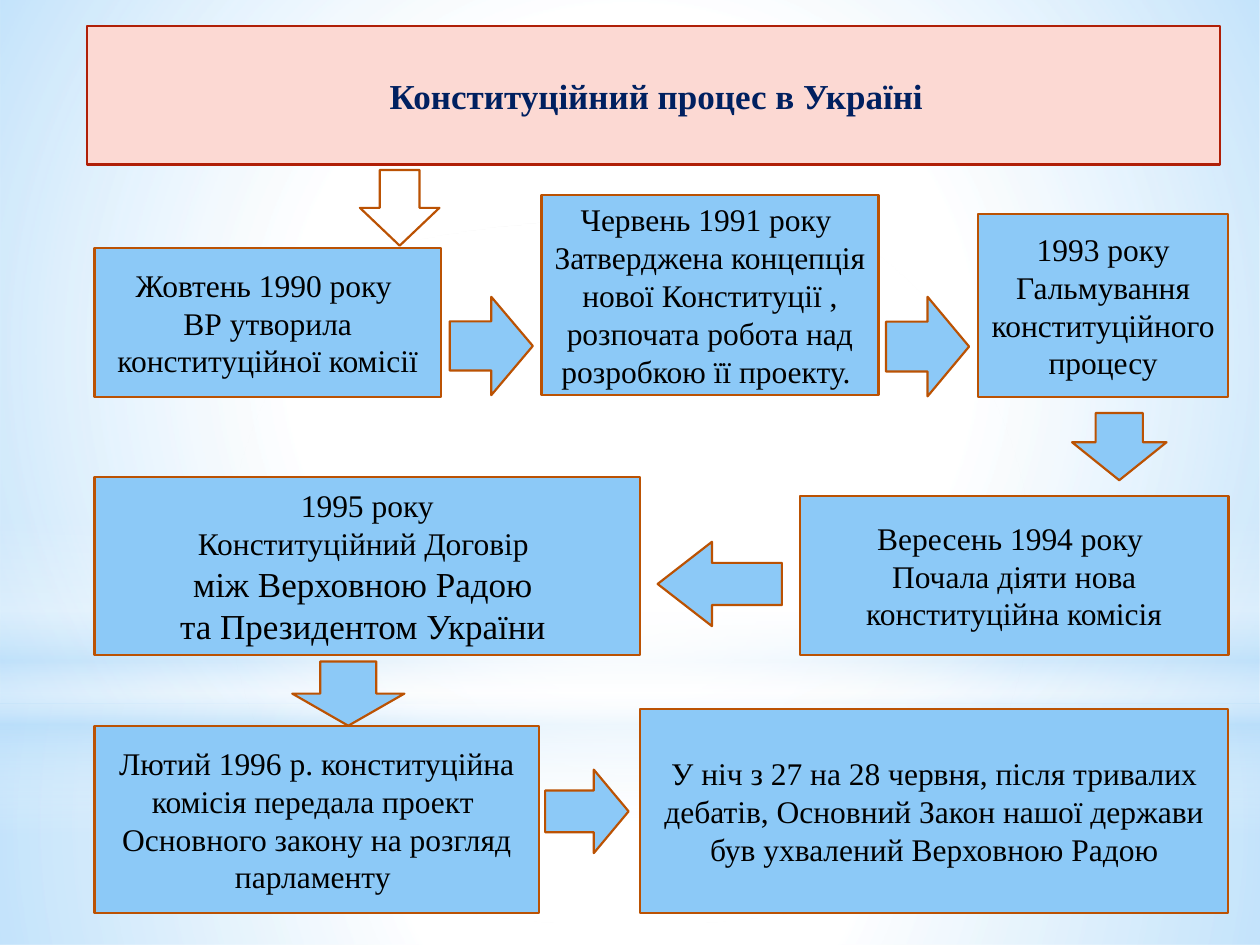
from dataclasses import dataclass

from lxml import etree
from pptx import Presentation
from pptx.dml.color import RGBColor
from pptx.enum import shapes, text
from pptx.oxml import parse_xml
from pptx.oxml.ns import nsdecls, qn
from pptx.util import Pt

Kind = shapes.MSO_SHAPE


@dataclass(frozen=True)
class Theme:
    font: str = "Times New Roman"
    body: float = 18
    large: float = 20
    line_width: float = 1.25
    ink: str = "000000"
    title: str = "002060"
    box: str = "8CC9F7"
    white: str = "FFFFFF"
    border: str = "BB5203"
    ribbon: str = "FCD9D3"
    ribbon_border: str = "B01F07"
    glow: str = "B4DCFA"


@dataclass(frozen=True)
class Area:
    left: float
    top: float
    width: float
    height: float

    def lengths(self) -> list:
        return [Pt(v) for v in (self.left, self.top, self.width, self.height)]


@dataclass(frozen=True)
class Stop:
    position: int
    color: str
    opacity: int = 100


@dataclass(frozen=True)
class Glow:
    kind: Kind
    area: Area
    stops: tuple
    radial: bool = True


@dataclass(frozen=True)
class Step:
    """A box standing on the bottom edge of its row; each line is a paragraph."""
    left: float
    right: float
    bottom: float
    height: float
    lines: tuple
    large_from: int = 99


@dataclass(frozen=True)
class Arrow:
    kind: Kind
    area: Area
    head: float = 0.5
    rotation: float = 0
    fill: str = Theme.box


THEME = Theme()
LEFT, RIGHT = 54, 702
ROWS = (226.8, 374.4, 521.6)
W, B = THEME.white, THEME.glow

GLOWS = (
    Glow(Kind.RECTANGLE, Area(0, 401.8, 720, 138.2),
         (Stop(0, W, 91), Stop(37, W, 76), Stop(100, B, 79))),
    Glow(Kind.RECTANGLE, Area(0, 0, 720, 401.8),
         (Stop(0, W, 89), Stop(48, W, 62), Stop(100, B, 79))),
    Glow(Kind.RECTANGLE, Area(0, 296.6, 720, 180),
         (Stop(0, W, 0), Stop(29, W, 30), Stop(45, B, 40),
          Stop(55, W, 26), Stop(65, B, 60), Stop(100, W, 0)), radial=False),
    Glow(Kind.OVAL, Area(0, 126, 720, 401.8), (Stop(0, W), Stop(56, W, 0))),
)

STEPS = (
    Step(LEFT, 252, ROWS[0], 85,
         ("Жовтень 1990 року ", "ВР утворила конституційної комісії")),
    Step(309.4, 502, ROWS[0] - 1.2, 114.2,
         ("Червень 1991 року ",
          "Затверджена концепція нової Конституції , розпочата робота "
          "над розробкою її проекту. ")),
    Step(558.8, RIGHT, ROWS[0], 104.4,
         ("1993 року Гальмування конституційного процесу",)),
    Step(457, RIGHT, ROWS[1], 91,
         ("Вересень 1994 року ", "Почала діяти нова конституційна комісія")),
    Step(LEFT, 365.8, ROWS[1], 101.6,
         ("1995 року", "Конституційний Договір ",
          "між Верховною Радою ", "та Президентом України "), large_from=2),
    Step(LEFT, 308, ROWS[2], 106.6,
         ("Лютий 1996 р. конституційна комісія передала проект ",
          "Основного закону на розгляд парламенту ")),
    Step(365.8, RIGHT, ROWS[2], 116.4,
         ("У ніч з 27 на 28 червня, після тривалих дебатів, Основний Закон "
          "нашої держави був ухвалений Верховною Радою",)),
)

ARROWS = (
    Arrow(Kind.DOWN_ARROW, Area(205.7, 97.2, 45.4, 43.2), fill=THEME.white),
    Arrow(Kind.RIGHT_ARROW, Area(257, 169.6, 47.5, 56.2)),
    Arrow(Kind.RIGHT_ARROW, Area(506.3, 169.6, 47.5, 56.9)),
    Arrow(Kind.DOWN_ARROW, Area(612.6, 236, 54, 38.4), head=0.565),
    Arrow(Kind.RIGHT_ARROW, Area(375.8, 309.6, 71, 48.2), head=0.644, rotation=180),
    Arrow(Kind.DOWN_ARROW, Area(167, 378, 64.1, 36.7)),
    Arrow(Kind.RIGHT_ARROW, Area(311.5, 439.8, 47.7, 47.7), head=0.417),
)


def paint(shape, fill: str, border: str) -> None:
    shape.fill.solid()
    shape.fill.fore_color.rgb = RGBColor.from_string(fill)
    shape.line.color.rgb = RGBColor.from_string(border)
    shape.line.width = Pt(THEME.line_width)


def format_paragraph(para, size: float, color: str, bold: bool = False) -> None:
    para.alignment = text.PP_ALIGN.CENTER
    para.font.name = THEME.font
    para.font.size = Pt(size)
    para.font.bold = bold
    para.font.color.rgb = RGBColor.from_string(color)


def add_glow(page, master, glow: Glow, order: int) -> None:
    """Draw a gradient shape and move it to the master, behind its placeholders."""
    shape = page.shapes.add_shape(glow.kind, *glow.area.lengths())
    shape.shadow.inherit = False
    shape.line.fill.background()
    shape.fill.background()
    stops = "".join(
        f'<a:gs pos="{s.position * 1000}"><a:srgbClr val="{s.color}">'
        f'<a:alpha val="{s.opacity * 1000}"/></a:srgbClr></a:gs>' for s in glow.stops)
    direction = ('<a:path path="circle"><a:fillToRect l="50000" t="50000" '
                 'r="50000" b="50000"/></a:path>' if glow.radial
                 else '<a:lin ang="5400000" scaled="0"/>')
    gradient = parse_xml(f'<a:gradFill {nsdecls("a")} rotWithShape="1">'
                         f'<a:gsLst>{stops}</a:gsLst>{direction}</a:gradFill>')
    properties = shape.element.spPr
    properties.replace(properties.find(qn("a:noFill")), gradient)
    master.shapes.element.insert(2 + order, shape.element)


def add_title(page, area: Area, wording: str) -> None:
    """Shape the title placeholder as a ribbon."""
    title = page.shapes.title
    title.left, title.top, title.width, title.height = area.lengths()
    geometry = etree.SubElement(title.element.spPr, qn("a:prstGeom"), prst="ribbon")
    etree.SubElement(geometry, qn("a:avLst"))
    paint(title, THEME.ribbon, THEME.ribbon_border)
    frame = title.text_frame
    frame.text = wording
    frame.word_wrap = True
    frame.auto_size = text.MSO_AUTO_SIZE.NONE
    frame.vertical_anchor = text.MSO_ANCHOR.MIDDLE
    para = frame.paragraphs[0]
    margins = para._p.get_or_add_pPr()
    margins.set("marL", str(Pt(18)))
    margins.set("indent", str(Pt(-14.4)))
    para.space_after = Pt(3)
    format_paragraph(para, THEME.large, THEME.title, bold=True)


def add_step(page, step: Step) -> None:
    area = Area(step.left, step.bottom - step.height,
                step.right - step.left, step.height)
    box = page.shapes.add_shape(Kind.RECTANGLE, *area.lengths())
    box.shadow.inherit = False
    paint(box, THEME.box, THEME.border)
    frame = box.text_frame
    frame.word_wrap = True
    frame.vertical_anchor = text.MSO_ANCHOR.MIDDLE
    frame.text = "\n".join(step.lines)
    for index, para in enumerate(frame.paragraphs):
        size = THEME.large if index >= step.large_from else THEME.body
        format_paragraph(para, size, THEME.ink)


def add_arrow(page, arrow: Arrow) -> None:
    shape = page.shapes.add_shape(arrow.kind, *arrow.area.lengths())
    shape.shadow.inherit = False
    shape.adjustments[1] = arrow.head
    shape.rotation = arrow.rotation
    paint(shape, arrow.fill, THEME.border)


def main() -> None:
    deck = Presentation()
    deck.slide_width, deck.slide_height = Pt(720), Pt(540)
    page = deck.slides.add_slide(deck.slide_layouts[5])
    for order, glow in enumerate(GLOWS):
        add_glow(page, deck.slide_master, glow, order)
    add_title(page, Area(49.7, 14.8, 647.3, 79.2), "Конституційний процес в Україні")
    for step in STEPS:
        add_step(page, step)
    for arrow in ARROWS:
        add_arrow(page, arrow)
    deck.save("out.pptx")


if __name__ == "__main__":
    main()
